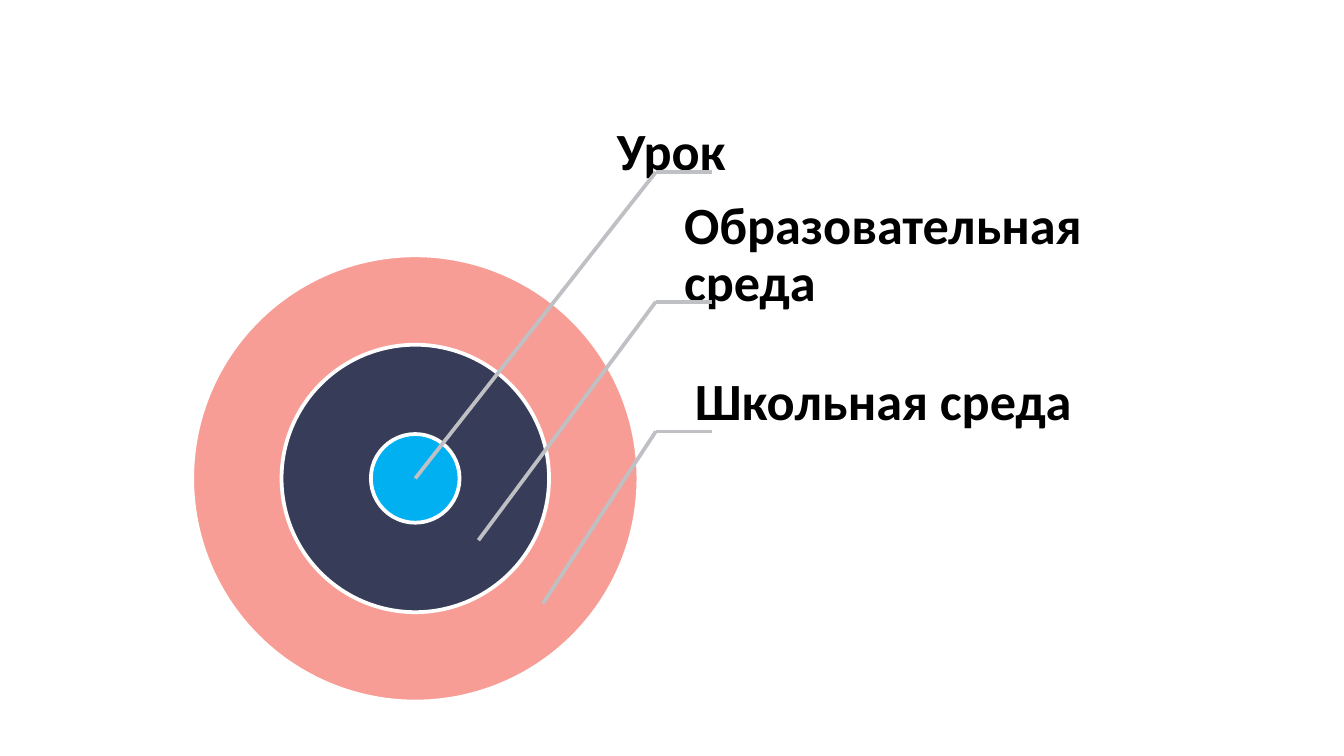
from lxml.etree import SubElement
from pptx import Presentation
from pptx.dml.color import RGBColor
from pptx.enum.shapes import MSO_CONNECTOR, MSO_SHAPE
from pptx.enum.text import MSO_ANCHOR
from pptx.oxml.ns import qn
from pptx.util import Inches, Pt

COLORS = {
    "school": "F79D95",
    "environment": "373C59",
    "lesson": "00B0F0",
    "outline": "FFFFFF",
    "leader": "BFC0C4",
    "text": "000000",
}
SLIDE_WIDTH = 10
SLIDE_HEIGHT = SLIDE_WIDTH * 9 / 16
CENTER_X, CENTER_Y = 3.09, 3.56
RINGS = [("school", 3.32), ("environment", 1.99), ("lesson", 0.66)]
ELBOW_X, SHELF_END_X = 4.88, 5.3
FIRST_SHELF_Y, LAST_SHELF_Y = 1.28, 3.21
LABELS = [
    ("Урок", (4.37, 0.92, 3.36, 0.45), (CENTER_X, CENTER_Y)),
    ("Образовательная среда", (4.87, 1.42, 3.78, 0.97), (3.56, 4.02)),
    ("Школьная среда", (4.95, 2.52, 3.27, 0.97), (4.04, 4.49)),
]
SHELF_STEP = (LAST_SHELF_Y - FIRST_SHELF_Y) / (len(LABELS) - 1)
FRAME_FORMAT = {
    "word_wrap": True,
    "vertical_anchor": MSO_ANCHOR.MIDDLE,
    "margin_left": Inches(0.22),
    "margin_top": Inches(0.04),
    "margin_right": Inches(0.04),
    "margin_bottom": Inches(0.04),
}
FONT_FORMAT = {"name": "Calibri", "size": Pt(28), "bold": True}


def apply_format(target, values):
    """Set each attribute of the target from the format values."""
    for attribute, value in values.items():
        setattr(target, attribute, value)


def color(role):
    """Return the colour of a role on the slide."""
    return RGBColor.from_string(COLORS[role])


def style_line(line, role):
    """Give a line its colour and the common width."""
    line.color.rgb = color(role)
    line.width = Pt(2)


def add_ring(slide, role, diameter):
    """Add one disc around the common centre."""
    left, top = CENTER_X - diameter / 2, CENTER_Y - diameter / 2
    ring = slide.shapes.add_shape(
        MSO_SHAPE.OVAL, Inches(left), Inches(top), Inches(diameter), Inches(diameter)
    )
    ring.shadow.inherit = False
    ring.fill.solid()
    ring.fill.fore_color.rgb = color(role)
    style_line(ring.line, "outline")


def add_label(slide, wording, bounds):
    """Add the name of a ring."""
    label = slide.shapes.add_textbox(*map(Inches, bounds))
    apply_format(label.text_frame, FRAME_FORMAT)
    paragraph = label.text_frame.paragraphs[0]
    paragraph.text = wording
    paragraph.line_spacing = 0.9
    apply_format(paragraph.font, FONT_FORMAT)
    paragraph.font.color.rgb = color("text")


def add_leader(slide, start, end):
    """Add one straight part of a leader line."""
    leader = slide.shapes.add_connector(
        MSO_CONNECTOR.STRAIGHT, *map(Inches, (*start, *end))
    )
    style_line(leader.line, "leader")
    SubElement(leader._element.spPr, qn("a:effectLst"))


def main():
    """Build the slide of nested school environments."""
    presentation = Presentation()
    presentation.slide_width = Inches(SLIDE_WIDTH)
    presentation.slide_height = Inches(SLIDE_HEIGHT)
    slide = presentation.slides.add_slide(presentation.slide_layouts[6])
    for role, diameter in RINGS:
        add_ring(slide, role, diameter)
    for index, (wording, bounds, target) in enumerate(LABELS):
        shelf_y = FIRST_SHELF_Y + index * SHELF_STEP
        elbow = (ELBOW_X, shelf_y)
        add_label(slide, wording, bounds)
        add_leader(slide, elbow, (SHELF_END_X, shelf_y))
        add_leader(slide, elbow, target)
    presentation.save("out.pptx")


if __name__ == "__main__":
    main()
